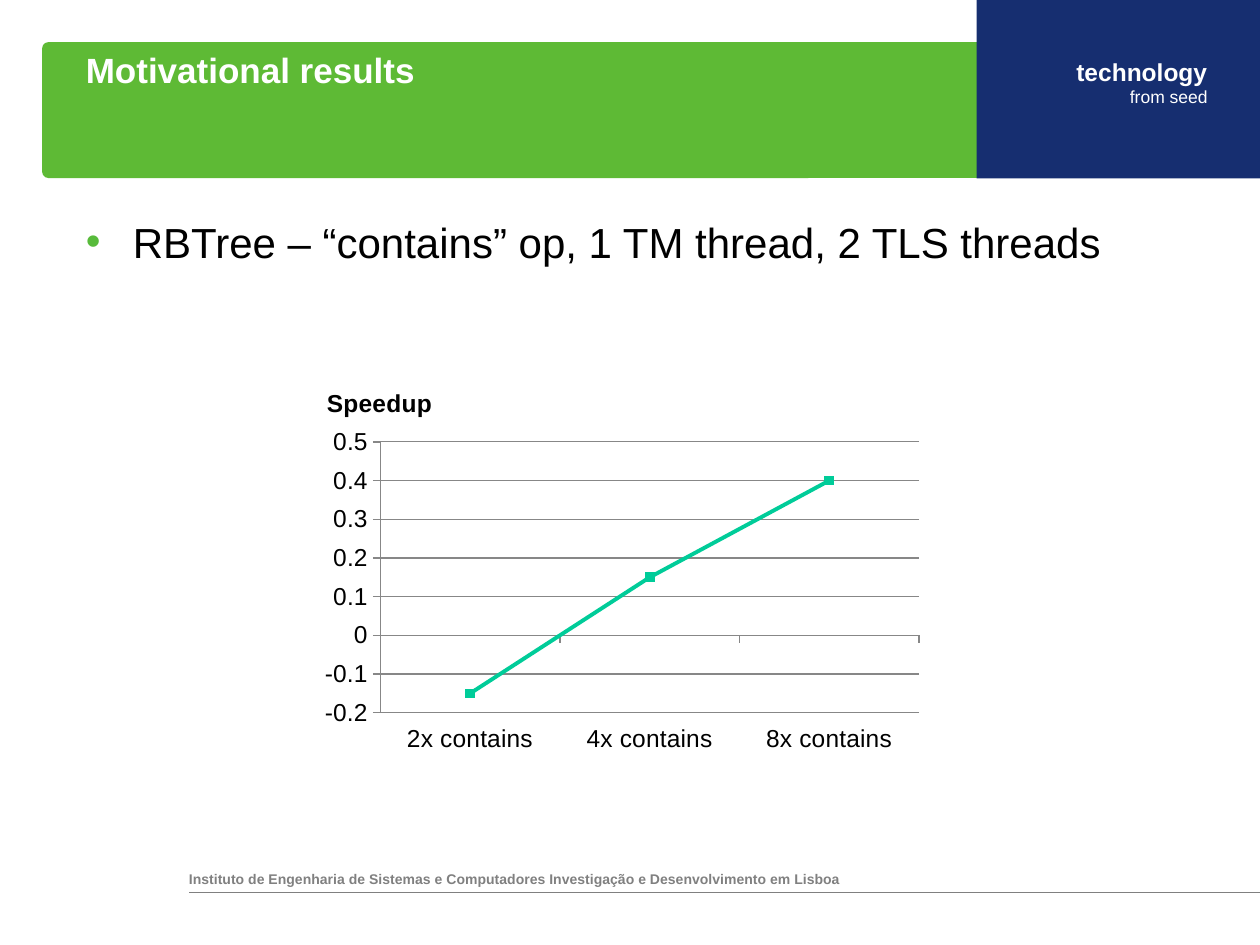
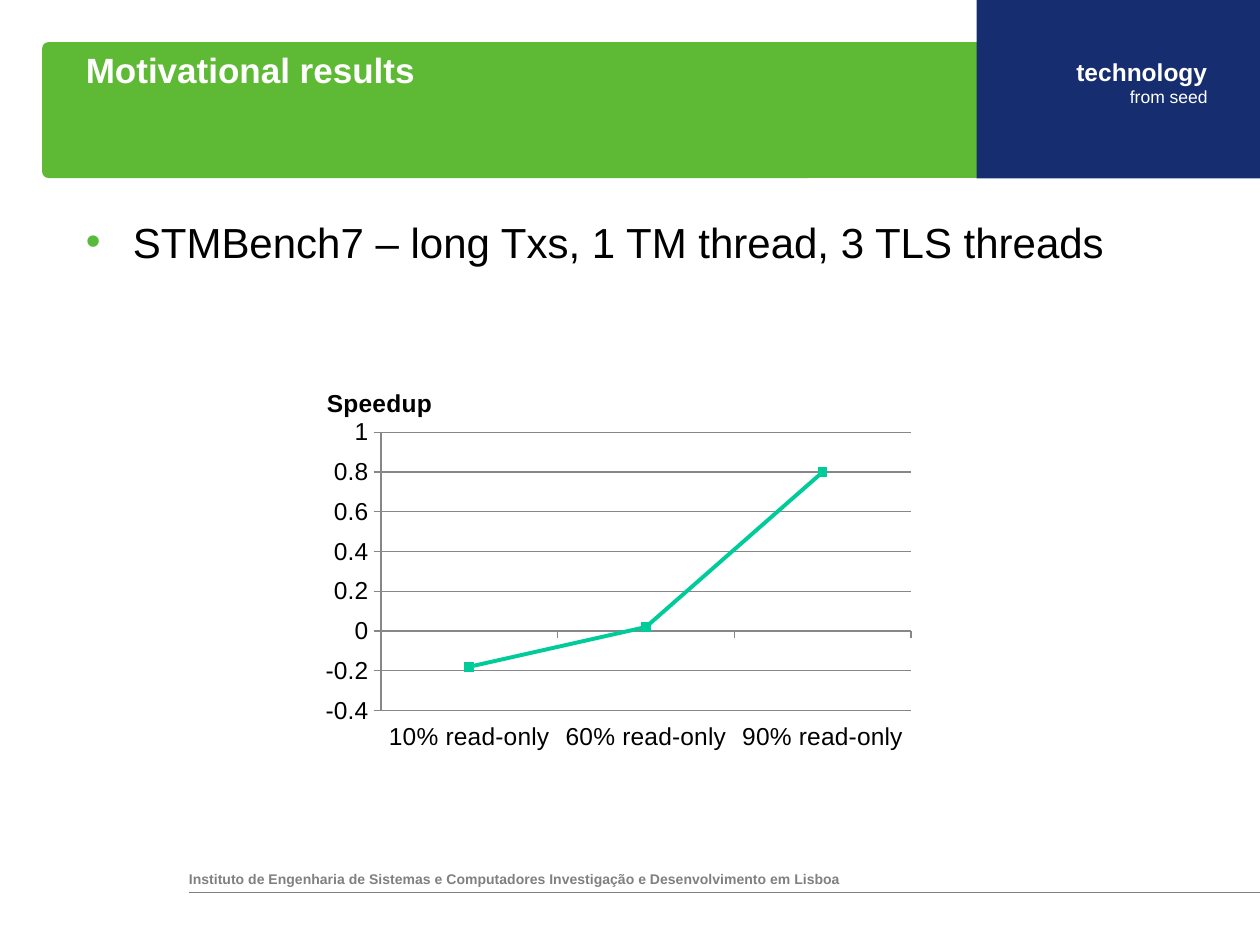
from lxml import etree
from pptx import Presentation
from pptx.chart.data import CategoryChartData
from pptx.dml.color import RGBColor
from pptx.enum.chart import XL_CHART_TYPE, XL_MARKER_STYLE, XL_TICK_LABEL_POSITION, XL_TICK_MARK
from pptx.enum.shapes import MSO_CONNECTOR, MSO_SHAPE
from pptx.enum.text import PP_ALIGN
from pptx.oxml.ns import qn
from pptx.util import Cm, Pt

LINE_MARKERS = XL_CHART_TYPE.LINE_MARKERS
SQUARE = XL_MARKER_STYLE.SQUARE
LABELS_LOW = XL_TICK_LABEL_POSITION.LOW
TICK_OUTSIDE = XL_TICK_MARK.OUTSIDE
STRAIGHT = MSO_CONNECTOR.STRAIGHT
RECTANGLE = MSO_SHAPE.RECTANGLE
ROUNDED = MSO_SHAPE.ROUNDED_RECTANGLE
LEFT, RIGHT = PP_ALIGN.LEFT, PP_ALIGN.RIGHT

FONT = "Arial"
GREEN = RGBColor(0x5E, 0xBA, 0x35)
BULLET_GREEN = RGBColor(0x58, 0xBB, 0x3B)
NAVY = RGBColor(0x16, 0x2E, 0x70)
TEAL = RGBColor(0x00, 0xCC, 0x99)
GRAY = RGBColor(0x80, 0x80, 0x80)
GRID_GRAY = RGBColor(0x87, 0x87, 0x87)
WHITE = RGBColor(0xFF, 0xFF, 0xFF)
BLACK = RGBColor(0x00, 0x00, 0x00)

SLIDE_WIDTH, SLIDE_HEIGHT = Cm(25.4), Cm(19.05)
TEXT_LEFT = Cm(1.48)
FOOTER_LEFT = Cm(3.81)
FOOTER_LINE_TOP = Cm(17.99)
INSET = Cm(0.25), Cm(0.13)
NO_INSET = Cm(0), Cm(0)

TITLE = "Motivational results"
INSTITUTE = "Instituto de Engenharia de Sistemas e Computadores Investigação e Desenvolvimento em Lisboa"
TAGLINE = [("technology", 14, True), ("from seed", 10, False)]

RESULTS = [
    {
        "setup": "RBTree – “contains” op, 1 TM thread, 2 TLS threads",
        "speedups": {"2x contains": -0.15, "4x contains": 0.15, "8x contains": 0.4},
        "scale": (-0.2, 0.5, 0.1),
        "chart_width": Cm(12.4),
        "plot": (0.094, 0.156, 0.876, 0.717),
    },
    {
        "setup": "STMBench7 – long Txs, 1 TM thread, 3 TLS threads",
        "speedups": {"10% read-only": -0.18, "60% read-only": 0.02, "90% read-only": 0.8},
        "scale": (-0.4, 1, 0.2),
        "chart_width": Cm(12.17),
        "plot": (0.097, 0.131, 0.878, 0.736),
    },
]


def style_font(font, size, color, bold=False):
    """Apply the deck's typeface with a size, colour and weight."""
    font.name = FONT
    font.size = Pt(size)
    font.bold = bold
    font.color.rgb = color


def add_band(slide, preset, left, top, width, height, color):
    """Add a borderless filled shape and return it."""
    band = slide.shapes.add_shape(preset, left, top, width, height)
    band.shadow.inherit = False
    band.fill.solid()
    band.fill.fore_color.rgb = color
    band.line.fill.background()
    return band


def add_text(slide, box, lines, color, align=LEFT, inset=NO_INSET):
    """Add a text box of (text, size, bold) lines and return its text frame."""
    frame = slide.shapes.add_textbox(*box).text_frame
    frame.word_wrap = True
    frame.margin_left = frame.margin_right = inset[0]
    frame.margin_top = frame.margin_bottom = inset[1]
    frame.text = "\n".join(text for text, _, _ in lines)
    for paragraph, (_, size, bold) in zip(frame.paragraphs, lines):
        paragraph.alignment = align
        style_font(paragraph.runs[0].font, size, color, bold)
    return frame


def add_bullet(paragraph, indent, color):
    """Give a paragraph a hanging coloured bullet."""
    properties = paragraph._p.get_or_add_pPr()
    properties.set("marL", str(indent))
    properties.set("indent", str(-indent))
    bullet_color = etree.SubElement(properties, qn("a:buClr"))
    etree.SubElement(bullet_color, qn("a:srgbClr"), val=str(color))
    etree.SubElement(properties, qn("a:buFont"), typeface=FONT)
    etree.SubElement(properties, qn("a:buChar"), char="•")


def add_rule(slide, left, right, top):
    """Add a thin horizontal line without a shadow."""
    rule = slide.shapes.add_connector(STRAIGHT, left, top, right, top)
    rule.line.color.rgb = GRAY
    rule.line.width = Pt(0.75)
    etree.SubElement(rule._element.spPr, qn("a:effectLst"))


def add_frame(slide):
    """Add the bands, tagline, footer and title shared by the slides."""
    title_band = add_band(slide, ROUNDED, Cm(0.85), Cm(0.85), Cm(20.96), Cm(2.74), GREEN)
    title_band.adjustments[0] = 0.046
    add_text(slide, (FOOTER_LEFT, Cm(17.55), Cm(15.24), Cm(0.34)), [(INSTITUTE, 8, True)], GRAY)
    add_rule(slide, FOOTER_LEFT, SLIDE_WIDTH, FOOTER_LINE_TOP)
    add_band(slide, RECTANGLE, Cm(19.69), 0, Cm(5.71), Cm(3.6), NAVY)
    add_text(slide, (Cm(19.21), Cm(1.15), Cm(5.13), Cm(1.02)), TAGLINE, WHITE, RIGHT)
    add_text(slide, (TEXT_LEFT, Cm(0.85), Cm(13.55), Cm(2.54)), [(TITLE, 20, True)], WHITE, inset=INSET)


def add_setup(slide, setup):
    """Add the bullet that describes the benchmark setup."""
    box = TEXT_LEFT, Cm(4.23), Cm(23.5), Cm(12.27)
    frame = add_text(slide, box, [(setup, 24, False)], BLACK, inset=INSET)
    add_bullet(frame.paragraphs[0], Cm(0.95), BULLET_GREEN)
    style_font(frame.paragraphs[0].font, 24, BLACK)


def place_chart_part(part, index, settings):
    """Give a chart part a manual layout as its child at the index."""
    for old_layout in part.findall(qn("c:layout")):
        part.remove(old_layout)
    layout = etree.Element(qn("c:layout"))
    manual = etree.SubElement(layout, qn("c:manualLayout"))
    for tag, value in settings.items():
        etree.SubElement(manual, qn(f"c:{tag}"), val=str(value))
    part.insert(index, layout)


def style_axis_line(line):
    """Draw an axis or grid line thin and gray."""
    line.color.rgb = GRID_GRAY
    line.width = Pt(0.75)


def add_axis_title(axis, text):
    """Put a horizontal title above the value axis."""
    title = axis.axis_title
    title.text_frame.text = text
    style_font(title.text_frame.paragraphs[0].runs[0].font, 14, BLACK, True)
    body = title._element.find(".//" + qn("a:bodyPr"))
    body.set("rot", "0")
    body.set("vert", "horz")
    place_chart_part(title._element, 1, {"xMode": "edge", "yMode": "edge", "x": 0, "y": 0})


def add_speedup_chart(slide, speedups, scale, width, plot):
    """Add the line chart of speedup per workload."""
    data = CategoryChartData()
    data.categories = list(speedups)
    data.add_series("Series 1", list(speedups.values()))
    chart = slide.shapes.add_chart(LINE_MARKERS, Cm(6.5), Cm(7.72), width, Cm(7.62), data).chart
    chart.has_title = False
    chart.has_legend = False
    style_font(chart.font, 14, BLACK)

    workloads, values = chart.category_axis, chart.value_axis
    workloads.tick_label_position = LABELS_LOW
    workloads.has_major_gridlines = False
    values.minimum_scale, values.maximum_scale, values.major_unit = scale
    values.has_major_gridlines = True
    style_axis_line(values.major_gridlines.format.line)
    for axis in (workloads, values):
        axis.major_tick_mark = TICK_OUTSIDE
        style_axis_line(axis.format.line)
    values.tick_labels.number_format = "General"
    values.tick_labels.number_format_is_linked = False
    add_axis_title(values, "Speedup")

    chart.plots[0].vary_by_categories = False
    series = chart.plots[0].series[0]
    series.smooth = False
    series.format.line.color.rgb = TEAL
    series.format.line.width = Pt(2.25)
    series.marker.style = SQUARE
    series.marker.size = 5
    series.marker.format.fill.solid()
    series.marker.format.fill.fore_color.rgb = TEAL
    series.marker.format.line.color.rgb = TEAL

    plot_area = chart._chartSpace.find(".//" + qn("c:plotArea"))
    settings = {"layoutTarget": "inner", "xMode": "edge", "yMode": "edge"}
    place_chart_part(plot_area, 0, settings | dict(zip("xywh", plot)))


def main():
    """Build one slide per benchmark result."""
    deck = Presentation()
    deck.slide_width, deck.slide_height = SLIDE_WIDTH, SLIDE_HEIGHT
    blank = deck.slide_layouts[6]
    for result in RESULTS:
        slide = deck.slides.add_slide(blank)
        add_frame(slide)
        add_setup(slide, result["setup"])
        add_speedup_chart(
            slide, result["speedups"], result["scale"], result["chart_width"], result["plot"]
        )
    deck.save("out.pptx")


if __name__ == "__main__":
    main()
